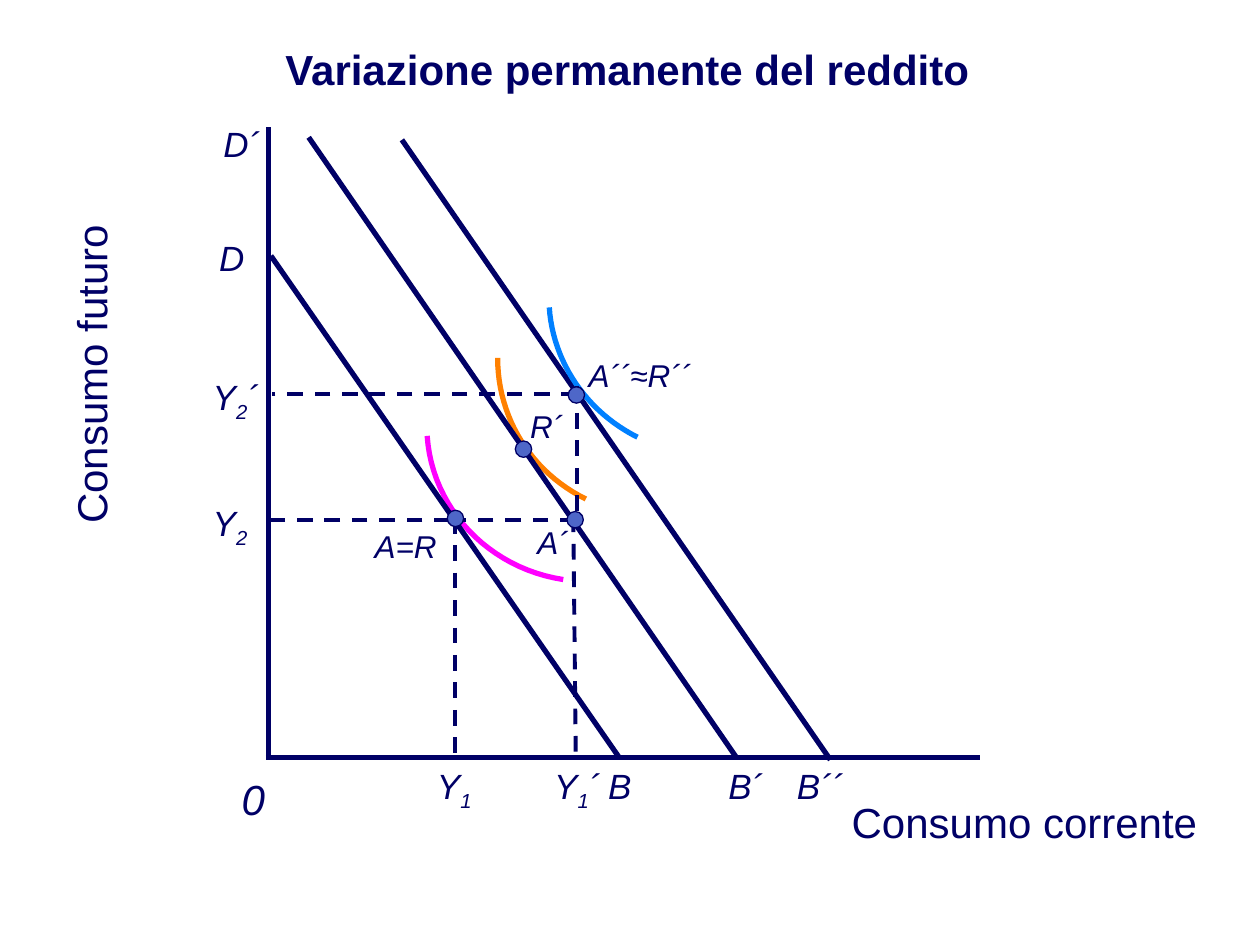
from lxml import etree
from pptx import Presentation
from pptx.dml.color import RGBColor
from pptx.enum.dml import MSO_LINE
from pptx.enum.shapes import MSO_CONNECTOR, MSO_SHAPE
from pptx.enum.text import MSO_ANCHOR, PP_ALIGN
from pptx.oxml.ns import qn
from pptx.util import Inches, Pt

NAVY = RGBColor(0x00, 0x00, 0x66)
PINK = RGBColor(0xFF, 0x00, 0xFF)
ORANGE = RGBColor(0xFF, 0x80, 0x00)
BLUE = RGBColor(0x00, 0x80, 0xFF)
DOT = RGBColor(0x4E, 0x67, 0xC8)
DASH = MSO_LINE.DASH
LEFT, CENTER = PP_ALIGN.LEFT, PP_ALIGN.CENTER
MIDDLE = MSO_ANCHOR.MIDDLE
STRAIGHT = MSO_CONNECTOR.STRAIGHT
OVAL = MSO_SHAPE.OVAL
STEPS = 24
SIZE = 0.13

# Everything in the plot is measured in inches from its top left corner
INNER = [(4.46, 5.02, 1.06, 0.1)]
BUDGET = [(3.72, 5.01, 0.32, 0.08), (2.79, 5.01, 0.02, 1.02)]
GUIDES = [
    (2.42, 3.09, 2.44, 5.01), (1.44, 3.12, 0, 3.12),
    (1.48, 3.1, 1.48, 4.97), (2.44, 3.12, 1.5, 3.12),
    (2.45, 2.12, 0.03, 2.12), (2.45, 2.05, 2.45, 3.09),
]
CURVES = [
    (PINK, [(1.26, 2.45), (1.3, 3.03), (1.75, 3.5), (2.34, 3.59)]),
    (ORANGE, [(1.82, 1.83), (1.82, 2.31), (2.09, 2.74), (2.52, 2.95)]),
    (BLUE, [(2.23, 1.43), (2.26, 1.87), (2.53, 2.26), (2.93, 2.46)]),
]
DOTS = [(1.96, 2.49), (2.37, 3.05), (1.42, 3.04), (2.38, 2.06)]
# text, left, top, width, size
NAMES = [
    ("D´", -0.5, -0.09, 0.58, 20), ("D", -0.58, 0.82, 0.58, 20),
    ("B", 2.5, 5.01, 0.58, 20), ("B´", 3.5, 5.01, 0.58, 20),
    ("B´´", 4.09, 5.01, 0.58, 20), ("0", -0.41, 5.08, 0.58, 24),
    ("A=R", 0.39, 3.12, 1.4, 18), ("A´", 1.97, 3.09, 0.58, 18),
    ("R´", 1.92, 2.17, 0.58, 18), ("A´´≈R´´", 2.25, 1.77, 1.4, 18),
]
# subscript, mark, left, top, width
INCOMES = [
    ("1", "", 1.24, 5.01, 0.63), ("1", "´", 2.17, 5.01, 0.75),
    ("2", "", -0.54, 2.92, 0.63), ("2", "´", -0.54, 1.92, 0.63),
]


def add_text(slide, x, y, w, h, runs, size, align=CENTER, bold=False,
             italic=False):
    """Add a one-line box; each run is (text, is_subscript)."""
    box = slide.shapes.add_textbox(Inches(x), Inches(y), Inches(w), Inches(h))
    frame = box.text_frame
    frame.word_wrap = True
    para = frame.paragraphs[0]
    para.alignment = align
    for text, sub in runs:
        run = para.add_run()
        run.text = text
        font = run.font
        font.name, font.size = "Arial", Pt(size)
        font.bold, font.italic = bold, italic
        font.color.rgb = NAVY
        if sub:
            run._r.get_or_add_rPr().set("baseline", "-25000")
    return box


def add_line(slide, x, y, ends, width=3, dash=None):
    x1, y1, x2, y2 = ends
    line = slide.shapes.add_connector(
        STRAIGHT, Inches(x + x1), Inches(y + y1), Inches(x + x2), Inches(y + y2))
    line.line.color.rgb = NAVY
    line.line.width = Pt(width)
    if dash:
        line.line.dash_style = dash
    etree.SubElement(line._element.spPr, qn("a:effectLst"))


def add_curve(slide, x, y, color, knots):
    """Trace a cubic curve through its four control points."""
    points = []
    for step in range(STEPS + 1):
        t = step / STEPS
        u = 1 - t
        parts = (u ** 3, 3 * u * u * t, 3 * u * t * t, t ** 3)
        px = sum(part * knot[0] for part, knot in zip(parts, knots))
        py = sum(part * knot[1] for part, knot in zip(parts, knots))
        points.append((Inches(x + px), Inches(y + py)))
    form = slide.shapes.build_freeform(*points[0])
    form.add_line_segments(points[1:], close=False)
    curve = form.convert_to_shape()
    curve.shadow.inherit = False
    curve.fill.background()
    curve.line.color.rgb = color
    curve.line.width = Pt(3)


def add_dot(slide, x, y):
    dot = slide.shapes.add_shape(
        OVAL, Inches(x), Inches(y), Inches(SIZE), Inches(SIZE))
    dot.shadow.inherit = False
    dot.fill.solid()
    dot.fill.fore_color.rgb = DOT
    dot.line.color.rgb = NAVY
    dot.line.width = Pt(0.75)


def add_title(slide, x, y, w, h):
    box = add_text(slide, x, y, w, h,
                   [("Variazione permanente del reddito", False)], 24, bold=True)
    box.text_frame.vertical_anchor = MIDDLE


def add_plot(slide, x, y, w, h):
    # Lines and indifference curves
    for ends in INNER:
        add_line(slide, x, y, ends)
    for color, knots in CURVES:
        add_curve(slide, x, y, color, knots)
    for ends in BUDGET:
        add_line(slide, x, y, ends)
    for ends in GUIDES:
        add_line(slide, x, y, ends, 2.25, DASH)

    # Axes
    add_line(slide, x, y, (0, 0, 0, h))
    add_line(slide, x, y, (-0.02, h, w, h))

    # Points
    for left, top in DOTS:
        add_dot(slide, x + left, y + top)

    # Labels
    for text, left, top, wide, size in NAMES:
        add_text(slide, x + left, y + top, wide, 0.43, [(text, False)], size,
                 italic=True)
    for sub, mark, left, top, wide in INCOMES:
        runs = [("Y", False), (sub, True)]
        if mark:
            runs.append((mark, False))
        add_text(slide, x + left, y + top, wide, 0.43, runs, 20, LEFT,
                 italic=True)

    # Axis titles
    add_text(slide, x + 4.25, y + h + 0.26, 3.5, 0.5,
             [("Consumo corrente", False)], 24)
    side = add_text(slide, x - 3.28, y + 1.71, 3.74, 0.5,
                    [("Consumo futuro", False)], 24)
    side.rotation = 270


def main():
    deck = Presentation()
    deck.slide_width, deck.slide_height = Inches(10), Inches(7.5)
    slide = deck.slides.add_slide(deck.slide_layouts[6])
    add_title(slide, 0, 0.21, 9.96, 0.67)
    add_plot(slide, 2.13, 1.01, 5.65, 5)
    deck.save("out.pptx")


if __name__ == "__main__":
    main()
